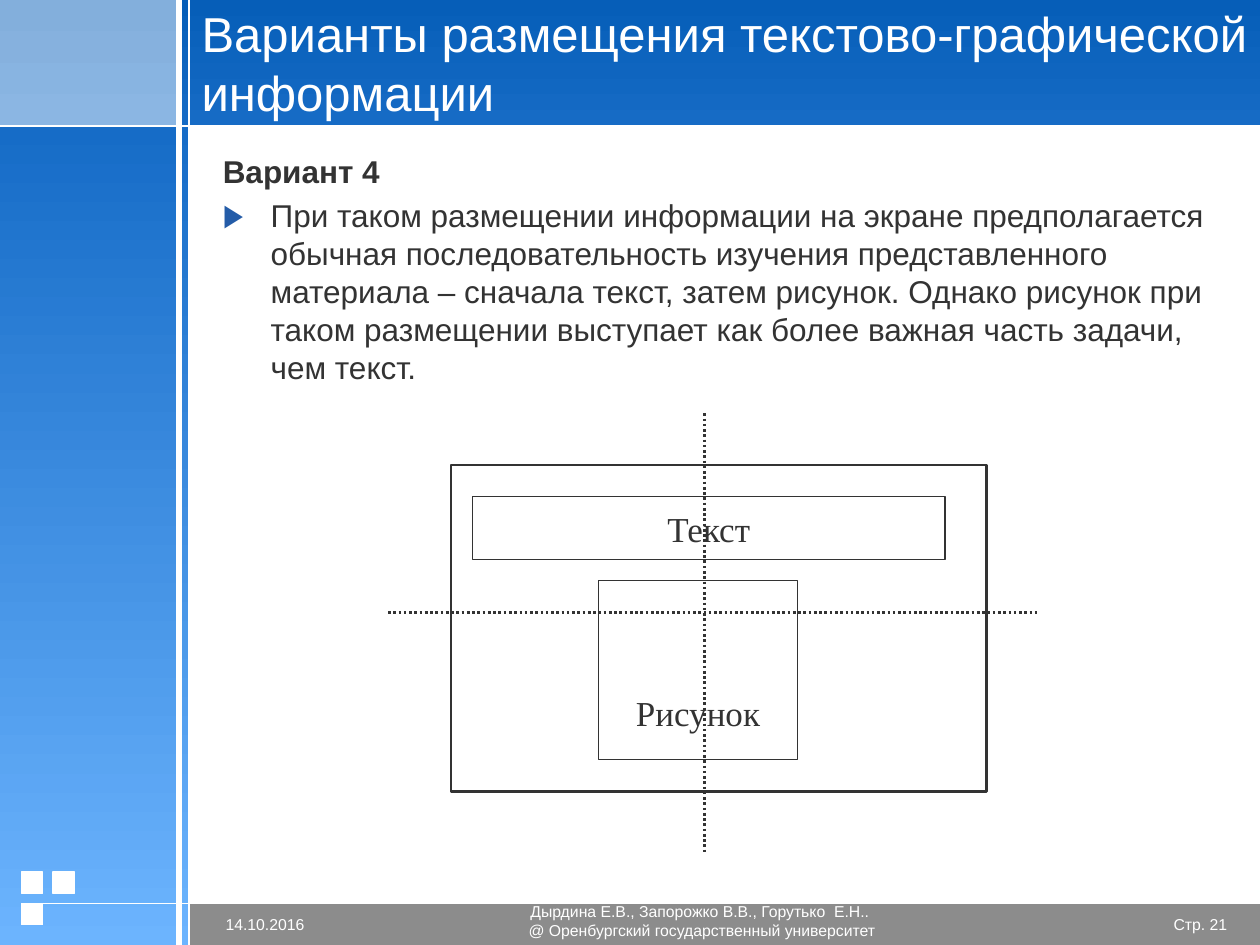
from dataclasses import dataclass
from lxml import etree
from pptx import Presentation
from pptx.dml.color import RGBColor
from pptx.enum.dml import MSO_LINE
from pptx.enum.shapes import MSO_CONNECTOR, MSO_SHAPE
from pptx.enum.text import MSO_ANCHOR, MSO_AUTO_SIZE, PP_ALIGN
from pptx.oxml.ns import qn
from pptx.util import Inches, Pt

RECT, LINE, DOT = MSO_SHAPE.RECTANGLE, MSO_CONNECTOR.STRAIGHT, MSO_LINE.ROUND_DOT
MID, LOW, TOP = MSO_ANCHOR.MIDDLE, MSO_ANCHOR.BOTTOM, MSO_ANCHOR.TOP
LEFT, MIDDLE, RIGHT = PP_ALIGN.LEFT, PP_ALIGN.CENTER, PP_ALIGN.RIGHT
FIXED = MSO_AUTO_SIZE.NONE


@dataclass(frozen=True)
class Theme:
    """Hold the colours, fonts and type sizes."""
    white: str = "FFFFFF"
    ink: str = "333333"
    gray: str = "8C8C8C"
    back: str = "BDE0FF"
    mark: str = "245CA8"
    pale: tuple = ("83AFDC", "8BB6E3")
    side: tuple = ("166CC7", "6CB4FE")
    band: tuple = ("065EB8", "166BC5")
    sans: str = "Arial"
    serif: str = "Times New Roman"
    title: int = 28
    label: int = 20
    body: int = 18
    foot: int = 9


THEME = Theme()


def rgb(code):
    """Turn a hex code into a colour."""
    return RGBColor.from_string(code)


def add_rect(slide, box, fill=None, line=None, width=0.75):
    """Add a rectangle with a plain, graded or empty fill."""
    rect = slide.shapes.add_shape(RECT, *map(Inches, box))
    rect.shadow.inherit = False
    if isinstance(fill, tuple):
        rect.fill.gradient()
        rect.fill.gradient_angle = 270
        for stop, code in zip(rect.fill.gradient_stops, fill):
            stop.color.rgb = rgb(code)
    elif fill:
        rect.fill.solid()
        rect.fill.fore_color.rgb = rgb(fill)
    else:
        rect.fill.background()
    if line:
        rect.line.color.rgb = rgb(line)
        rect.line.width = Pt(width)
    else:
        rect.line.fill.background()
    return rect


def add_line(slide, ends, color, width, dash=None):
    """Add a straight line without a shadow."""
    line = slide.shapes.add_connector(LINE, *map(Inches, ends))
    line.line.color.rgb = rgb(color)
    line.line.width = Pt(width)
    if dash:
        line.line.dash_style = dash
    etree.SubElement(line._element.spPr, qn("a:effectLst"))


def set_frame(frame, anchor, inset=None, wrap=True):
    """Set the anchor, insets and wrapping of a text frame."""
    frame.auto_size = FIXED
    frame.word_wrap = wrap
    frame.vertical_anchor = anchor
    if inset is not None:
        left, top, right, low = map(Inches, inset)
        frame.margin_left, frame.margin_top = left, top
        frame.margin_right, frame.margin_bottom = right, low


def add_run(para, text, size, color, font=THEME.sans, bold=False, align=LEFT):
    """Add one styled run to an aligned paragraph."""
    para.alignment = align
    run = para.add_run()
    run.text = text
    run.font.size, run.font.name, run.font.bold = Pt(size), font, bold
    run.font.color.rgb = rgb(color)


def set_indent(para, depth, mark=None):
    """Hang a paragraph, with a bullet if one is given."""
    props = para._p.get_or_add_pPr()
    props.set("marL", str(Inches(depth)))
    props.set("indent", str(-Inches(depth)))
    if mark:
        tint = etree.SubElement(props, qn("a:buClr"))
        etree.SubElement(tint, qn("a:srgbClr"), val=THEME.mark)
        etree.SubElement(props, qn("a:buFont"), typeface=THEME.sans)
        etree.SubElement(props, qn("a:buChar"), char=mark)
    else:
        etree.SubElement(props, qn("a:buNone"))


def draw_frame(slide, box):
    """Draw the coloured bands, squares and white rules."""
    left, top, wide, high = box
    right, low = left + wide, top + high
    edge, rail, head, foot = left + 1.5, left + 1.42, top + 1, top + 7.17
    add_rect(slide, (edge, head, right - edge, foot - head), THEME.white)
    add_rect(slide, (edge, foot, right - edge, low - foot), THEME.gray)
    add_rect(slide, (left, top, edge - left, head - top), THEME.pale)
    add_rect(slide, (left, head, edge - left, low - head), THEME.side)
    add_rect(slide, (rail, top, right - rail, head - top), THEME.band)
    start, size, step = left + 0.17, 0.17, 0.25
    for col, row in ((0, 0), (0, -1), (1, -1)):
        spot = (start + col * step, foot + row * step, size, size)
        add_rect(slide, spot, THEME.white, THEME.white)
    for ends, width in (((edge, top, edge, low), 1),
                        ((rail, top, rail, low), 3),
                        ((right, head, left, head), 1),
                        ((right, foot, start, foot), 1)):
        add_line(slide, ends, THEME.white, width)


def draw_foot(slide, box):
    """Write the date, authors and page number."""
    left, top, wide, high = box
    cells = (
        (7.67, 0.25, 0.57, 0.17, RIGHT, ("Стр. 21",)),
        (0.29, 0.25, 1.21, 0.17, LEFT, ("14.10.2016",)),
        (1.22, 0, 5.7, 0.61, MIDDLE,
         ("Дырдина Е.В., Запорожко В.В., Горутько  Е.Н.. ",
          "@ Оренбургский государственный университет")),
    )
    for x, y, w, h, align, lines in cells:
        spot = map(Inches, (left + x, top + y, w, h))
        frame = slide.shapes.add_textbox(*spot).text_frame
        set_frame(frame, MID, (0, 0, 0, 0))
        for i, text in enumerate(lines):
            para = frame.add_paragraph() if i else frame.paragraphs[0]
            add_run(para, text, THEME.foot, THEME.white, align=align)


def draw_title(slide, box):
    """Place the title above the bands and style it."""
    title = slide.shapes.title
    title._element.getparent().append(title._element)
    title.left, title.top, title.width, title.height = map(Inches, box)
    set_frame(title.text_frame, MID)
    add_run(title.text_frame.paragraphs[0],
            "Варианты размещения текстово-графической информации",
            THEME.title, THEME.white)


def draw_body(slide, box):
    """Write the heading and the bulleted text."""
    frame = slide.shapes.add_textbox(*map(Inches, box)).text_frame
    set_frame(frame, TOP)
    head, item = frame.paragraphs[0], frame.add_paragraph()
    for para, mark in ((head, None), (item, "▶")):
        para.space_before = Pt(THEME.body * 0.2)
        set_indent(para, 0.38, mark)
    add_run(head, "Вариант 4", THEME.body, THEME.ink, bold=True)
    add_run(item, "При таком размещении информации на экране предполагается "
            "обычная последовательность изучения представленного материала – "
            "сначала текст, затем рисунок. Однако рисунок при таком размещении "
            "выступает как более важная часть задачи, чем текст.",
            THEME.body, THEME.ink)


def draw_plan(slide, box):
    """Draw the screen plan with its dotted axes."""
    left, top, wide, high = box
    add_rect(slide, (left + 0.5, top + 0.41, 4.25, 2.59), None, THEME.ink, 1.5)
    for ends in ((left + 2.51, top, left + 2.51, top + high),
                 (left, top + 1.58, left + wide, top + 1.58)):
        add_line(slide, ends, THEME.ink, 1.5, DOT)
    for x, y, w, h, text, anchor, low in (
            (1.67, 1.33, 1.58, 1.42, "Рисунок", LOW, 0.21),
            (0.67, 0.66, 3.75, 0.5, "Текст", MID, 0.04)):
        rect = add_rect(slide, (left + x, top + y, w, h), None, THEME.ink)
        set_frame(rect.text_frame, anchor, (0.1, 0.05, 0.1, low), False)
        add_run(rect.text_frame.paragraphs[0], text, THEME.label, THEME.ink,
                THEME.serif, align=MIDDLE)


def main():
    """Build and save the slide."""
    deck = Presentation()
    deck.slide_width, deck.slide_height = Inches(10), Inches(7.5)
    slide = deck.slides.add_slide(deck.slide_layouts[5])
    slide.background.fill.solid()
    slide.background.fill.fore_color.rgb = rgb(THEME.back)
    draw_frame(slide, (0, 0, 10, 7.5))
    draw_foot(slide, (1.5, 7, 8.5, 0.5))
    draw_title(slide, (1.5, 0.08, 8.75, 0.83))
    draw_body(slide, (1.67, 1.16, 8.17, 2.75))
    draw_plan(slide, (3.08, 3.28, 5.17, 3.5))
    deck.save("out.pptx")


if __name__ == "__main__":
    main()
